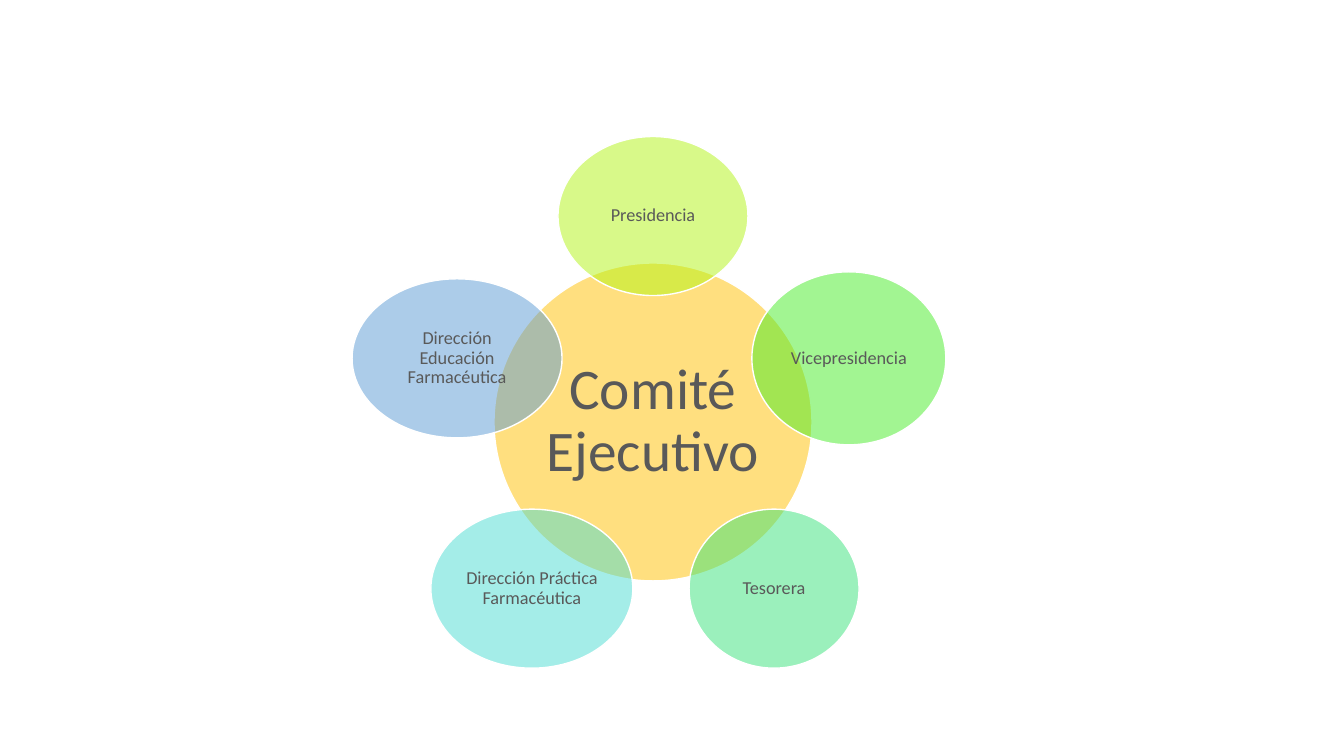
import math

from lxml import etree
from pptx import Presentation
from pptx import util as u
from pptx.dml.color import RGBColor
from pptx.enum import shapes, text
from pptx.oxml.ns import qn

EMU_PER_PX = 914400 / 100.8
SLIDE_WIDTH, SLIDE_HEIGHT = 1344, 756

WHITE = RGBColor(0xFF, 0xFF, 0xFF)
GREY = RGBColor(0x59, 0x59, 0x59)
AMBER = RGBColor(0xFF, 0xC0, 0x00)
LIME = RGBColor(0xB2, 0xF5, 0x14)
GREEN = RGBColor(0x46, 0xEC, 0x27)
MINT = RGBColor(0x39, 0xE3, 0x7B)
TURQUOISE = RGBColor(0x4A, 0xDC, 0xD2)
BLUE = RGBColor(0x5B, 0x9B, 0xD5)

COMMITTEE_BOX = (494, 263, 318, 318)
ORBIT_RADIUS = 206
# Clockwise from the top: label, width, height, colour
MEMBERS = [
    ("Presidencia", 190, 159, LIME),
    ("Vicepresidencia", 194, 173, GREEN),
    ("Tesorera", 170, 159, MINT),
    ("Dirección Práctica Farmacéutica", 202, 159, TURQUOISE),
    ("Dirección Educación Farmacéutica", 210, 159, BLUE),
]


def px(length):
    return u.Emu(round(length * EMU_PER_PX))


def add_bubble(slide, label, center, size, color, font_size, inset):
    """Add a half-transparent ellipse with its label, centred on a point."""
    (x, y), (width, height) = center, size
    shape = slide.shapes.add_shape(
        shapes.MSO_SHAPE.OVAL,
        px(x - width / 2), px(y - height / 2), px(width), px(height))
    shape.shadow.inherit = False
    shape.fill.solid()
    shape.fill.fore_color.rgb = color
    color_element = shape.fill._xPr.find(qn("a:solidFill"))[0]
    etree.SubElement(color_element, qn("a:alpha"), val="50000")
    shape.line.color.rgb = WHITE
    shape.line.width = u.Pt(1)

    frame = shape.text_frame
    frame.word_wrap = True
    frame.vertical_anchor = text.MSO_ANCHOR.MIDDLE
    frame.margin_left = frame.margin_right = px(inset)
    frame.margin_top = frame.margin_bottom = px(inset)
    paragraph = frame.paragraphs[0]
    paragraph.text = label
    paragraph.alignment = text.PP_ALIGN.CENTER
    paragraph.line_spacing = 0.9
    paragraph.font.name = "Calibri"
    paragraph.font.size = u.Pt(font_size)
    paragraph.font.color.rgb = GREY


def add_committee(slide, box):
    """Draw the committee circle filling the box, its members around it."""
    left, top, width, height = box
    center_x, center_y = left + width / 2, top + height / 2
    add_bubble(slide, "Comité Ejecutivo", (center_x, center_y),
               (width, height), AMBER, 41, 6)
    for index, (label, member_width, member_height, color) in enumerate(MEMBERS):
        angle = math.tau * index / len(MEMBERS)
        center = (center_x + ORBIT_RADIUS * math.sin(angle),
                  center_y - ORBIT_RADIUS * math.cos(angle))
        add_bubble(slide, label, center, (member_width, member_height),
                   color, 13, 2)


def main():
    presentation = Presentation()
    presentation.slide_width = px(SLIDE_WIDTH)
    presentation.slide_height = px(SLIDE_HEIGHT)
    blank_layout = presentation.slide_layouts.get_by_name("Blank")
    slide = presentation.slides.add_slide(blank_layout)
    add_committee(slide, COMMITTEE_BOX)
    presentation.save("out.pptx")


if __name__ == "__main__":
    main()
